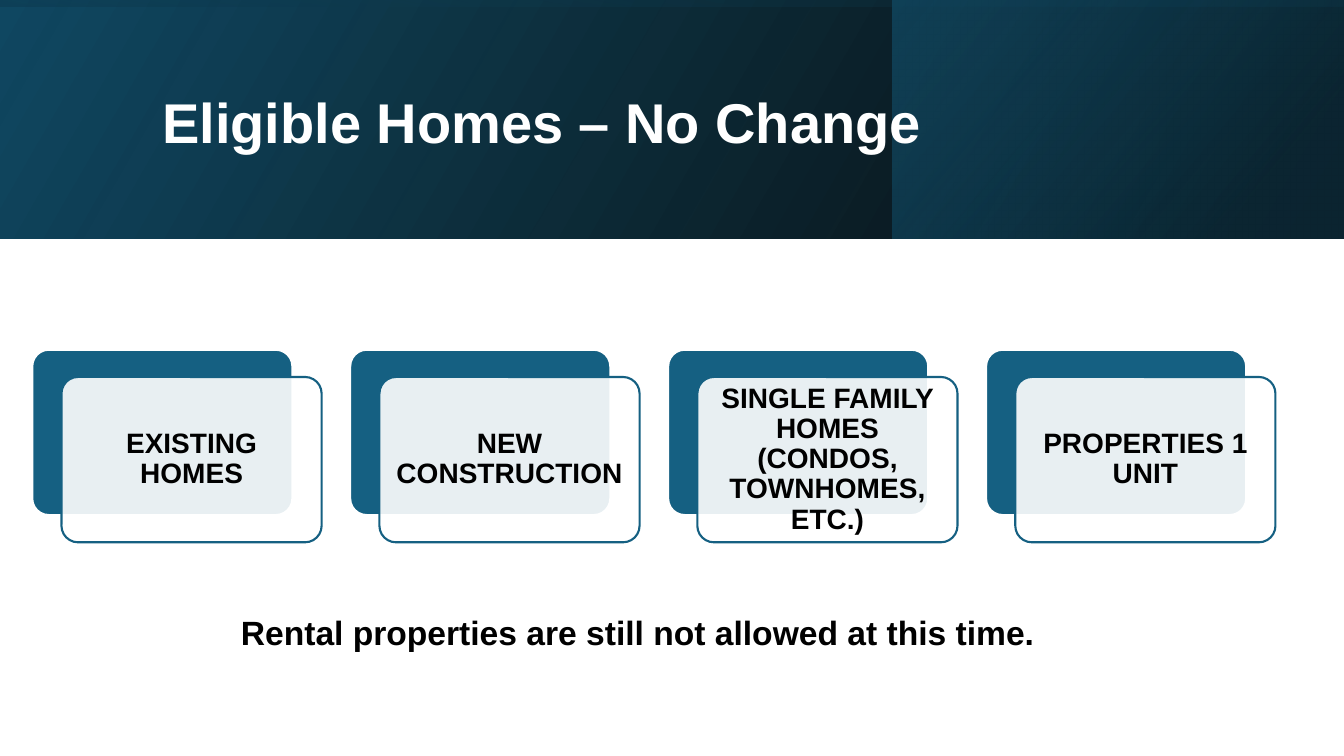
from dataclasses import dataclass

from lxml.etree import SubElement
from pptx import Presentation
from pptx.dml.color import RGBColor
from pptx.enum.shapes import MSO_SHAPE
from pptx.enum.text import MSO_ANCHOR, MSO_AUTO_SIZE, PP_ALIGN
from pptx.oxml import parse_xml
from pptx.oxml.ns import nsdecls, qn
from pptx.util import Inches, Pt


@dataclass(frozen=True)
class Theme:
    """Colours, font and type sizes of the slide."""
    font: str = "Arial"
    accent: str = "156082"
    deep: str = "104862"
    navy: str = "0B3041"
    black: str = "000000"
    white: str = "FFFFFF"
    title_size: int = 40
    card_size: int = 20
    caption_size: int = 24


THEME = Theme()
HOME_TYPES = [
    "EXISTING HOMES",
    "NEW CONSTRUCTION",
    "SINGLE FAMILY HOMES (CONDOS, TOWNHOMES, ETC.)",
    "PROPERTIES 1 UNIT",
]


def inches(*lengths):
    """Convert numbers to slide lengths."""
    return [Inches(length) for length in lengths]


def write_text(shape, text, size, color, alignment=PP_ALIGN.LEFT, line_spacing=None):
    """Fill a shape with one bold paragraph."""
    text_frame = shape.text_frame
    text_frame.text = text
    text_frame.word_wrap = True
    paragraph = text_frame.paragraphs[0]
    paragraph.alignment = alignment
    if line_spacing:
        paragraph.line_spacing = line_spacing
    font = paragraph.runs[0].font
    font.name = THEME.font
    font.size = Pt(size)
    font.bold = True
    font.color.rgb = RGBColor.from_string(color)


def add_gradient_panel(slide, box, stops, angle, rotation=0):
    """Add a mirrored rectangle with a translucent linear gradient."""
    panel = slide.shapes.add_shape(MSO_SHAPE.RECTANGLE, *inches(*box))
    panel.shadow.inherit = False
    panel.rotation = rotation
    panel.line.fill.background()
    panel.fill.background()
    properties = panel._element.spPr
    properties.find(qn("a:xfrm")).set("flipH", "1")
    stop_xml = "".join(
        f'<a:gs pos="{position * 1000}"><a:srgbClr val="{color}">'
        f'<a:alpha val="{alpha * 1000}"/></a:srgbClr></a:gs>'
        for position, color, alpha in stops
    )
    gradient = parse_xml(
        f'<a:gradFill {nsdecls("a")} rotWithShape="1"><a:gsLst>{stop_xml}</a:gsLst>'
        f'<a:lin ang="{angle * 60000}" scaled="0"/></a:gradFill>'
    )
    properties.replace(properties.find(qn("a:noFill")), gradient)


def add_banner(slide, left, top, width, height, text):
    """Build the layered gradient banner and its title."""
    side_width = 4.48
    add_gradient_panel(
        slide, (left, top, width, height),
        [(0, THEME.black, 96), (100, THEME.deep, 100)], 330,
    )
    add_gradient_panel(
        slide, (left + width - side_width, top, side_width, height),
        [(19, THEME.navy, 68), (100, THEME.accent, 48)], 320,
    )
    offset = (width - height) / 2
    add_gradient_panel(
        slide, (left + offset, top - offset, height, width),
        [(23, THEME.deep, 16), (99, THEME.black, 45)], 350, rotation=270,
    )
    title = slide.shapes.title
    title.left, title.top, title.width, title.height = inches(
        left + 1.51, top + 0.38, 10.63, 1.72
    )
    write_text(title, text, THEME.title_size, THEME.white, line_spacing=0.9)
    title.text_frame.vertical_anchor = MSO_ANCHOR.MIDDLE
    title.text_frame.auto_size = MSO_AUTO_SIZE.NONE
    slide.shapes._spTree.append(title._element)


def add_card_panel(group, box, fill, line, opacity=100):
    """Add one rounded panel of a card."""
    panel = group.shapes.add_shape(MSO_SHAPE.ROUNDED_RECTANGLE, *inches(*box))
    panel.shadow.inherit = False
    panel.adjustments[0] = 0.1
    panel.fill.solid()
    panel.fill.fore_color.rgb = RGBColor.from_string(fill)
    panel.line.color.rgb = RGBColor.from_string(line)
    panel.line.width = Pt(1.5)
    if opacity < 100:
        color = panel._element.spPr.find(qn("a:solidFill")).find(qn("a:srgbClr"))
        SubElement(color, qn("a:alpha")).set("val", str(opacity * 1000))


def add_card(group, left, top, width, height, text):
    """Build a solid panel with an offset translucent panel and its label."""
    shift_x, shift_y, margin = 0.29, 0.27, 0.05
    panel_width, panel_height = width - shift_x, height - shift_y
    front_left, front_top = left + shift_x, top + shift_y
    add_card_panel(
        group, (left, top, panel_width, panel_height), THEME.accent, THEME.white
    )
    add_card_panel(
        group, (front_left, front_top, panel_width, panel_height),
        THEME.white, THEME.accent, opacity=90,
    )
    label = group.shapes.add_textbox(*inches(
        front_left + margin, front_top + margin,
        panel_width - 2 * margin, panel_height - 2 * margin,
    ))
    write_text(label, text, THEME.card_size, THEME.black, PP_ALIGN.CENTER, 0.9)
    text_frame = label.text_frame
    text_frame.vertical_anchor = MSO_ANCHOR.MIDDLE
    text_frame.margin_left = text_frame.margin_right = Inches(0.08)
    text_frame.margin_top = text_frame.margin_bottom = Inches(0.08)


def add_card_row(slide, left, top, width, height, labels):
    """Spread equal cards across the box."""
    card_width = 2.87
    pitch = (width - card_width) / (len(labels) - 1)
    group = slide.shapes.add_group_shape()
    for index, label in enumerate(labels):
        add_card(group, left + index * pitch, top, card_width, height, label)


def add_caption(slide, left, top, width, height, text):
    """Add the statement below the cards."""
    caption = slide.shapes.add_textbox(*inches(left, top, width, height))
    write_text(caption, text, THEME.caption_size, THEME.black)
    caption.text_frame.auto_size = MSO_AUTO_SIZE.SHAPE_TO_FIT_TEXT


def main():
    """Build and save the presentation."""
    presentation = Presentation()
    presentation.slide_width = Inches(13.33)
    presentation.slide_height = Inches(7.5)
    slide = presentation.slides.add_slide(presentation.slide_layouts[5])
    add_banner(slide, 0, 0, 13.33, 2.37, "Eligible Homes – No Change")
    add_card_row(slide, 0.32, 3.47, 12.33, 1.91, HOME_TYPES)
    add_caption(
        slide, 2.29, 6.02, 8.75, 0.5,
        "Rental properties are still not allowed at this time.",
    )
    presentation.save("out.pptx")


if __name__ == "__main__":
    main()
